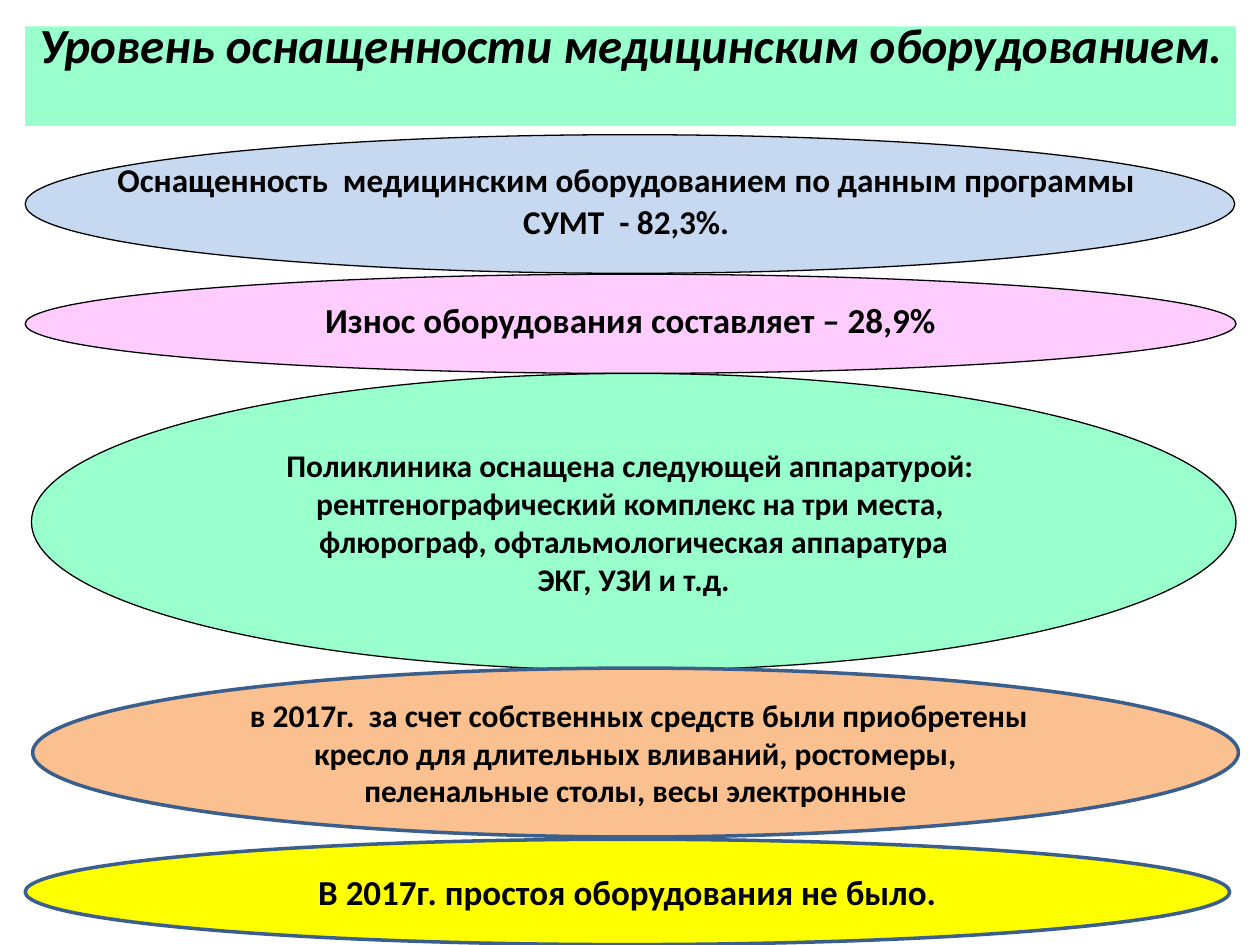
import pptx
import pptx.util
import pptx.dml.color
import pptx.enum.shapes
import pptx.enum.text

Pt = pptx.util.Pt
RGBColor = pptx.dml.color.RGBColor
MIDDLE = pptx.enum.text.MSO_ANCHOR.MIDDLE
CENTER = pptx.enum.text.PP_ALIGN.CENTER

THEME = {
    "font": "Calibri",
    "text": "000000",
    "mint": "99FFCC",
    "blue": "C6D9F1",
    "pink": "FFCCFF",
    "orange": "FAC090",
    "yellow": "FFFF00",
    "thin": ("000000", 0.75),
    "thick": ("3A5F8C", 2),
    "title": 28,
    "large": 20,
    "medium": 19,
    "body": 18,
}
TIGHT = {"line_spacing": 0.8, "space_before": Pt(6)}

TITLE = "Уровень оснащенности медицинским оборудованием."
TITLE_BOX = (14.4, 15.1, 691.9, 56.9)

# box, fill, outline, type size, wrap, paragraph spacing, paragraphs
ELLIPSES = [
    ((14.4, 77, 691.2, 79.2), "blue", "thin", "medium", False, TIGHT, [
        "Оснащенность  медицинским оборудованием по данным программы ",
        "СУМТ  - 82,3%. "]),
    ((14.4, 156.7, 691.9, 56.7), "pink", "thin", "large", False, TIGHT, [
        "Износ оборудования составляет – 28,9%"]),
    ((18, 213.4, 688.3, 169.6), "mint", "thin", "body", False, {}, [
        "Поликлиника оснащена следующей аппаратурой: ",
        "рентгенографический комплекс на три места, ",
        "флюрограф, офтальмологическая аппаратура",
        "ЭКГ, УЗИ и т.д."]),
    ((18.7, 381.8, 689, 96.5), "orange", "thick", "body", True, {}, [
        " в 2017г.  за счет собственных средств были приобретены кресло для "
        "длительных вливаний, ростомеры, пеленальные столы, весы электронные"]),
    ((14.4, 479.6, 688.3, 60.2), "yellow", "thick", "large", True, {}, [
        "В 2017г. простоя оборудования не было."]),
]


def set_attributes(target, values):
    for name, value in values.items():
        setattr(target, name, value)


def place(shape, box):
    set_attributes(shape, dict(zip(("left", "top", "width", "height"), map(Pt, box))))


def paint(shape, color):
    shape.fill.solid()
    shape.fill.fore_color.rgb = RGBColor.from_string(THEME[color])


def write(frame, lines, size, spacing, italic=False):
    for index, line in enumerate(lines):
        paragraph = frame.paragraphs[0] if index == 0 else frame.add_paragraph()
        set_attributes(paragraph, {"alignment": CENTER, **spacing})
        run = paragraph.add_run()
        run.text = line
        set_attributes(run.font, {"name": THEME["font"], "size": Pt(THEME[size]),
                                  "bold": True, "italic": italic})
        run.font.color.rgb = RGBColor.from_string(THEME["text"])


def add_title(slide):
    title = slide.shapes.title
    place(title, TITLE_BOX)
    paint(title, "mint")
    # The deep bottom margin lifts the heading to the top edge of its band.
    set_attributes(title.text_frame, {
        "word_wrap": True, "vertical_anchor": MIDDLE,
        "auto_size": pptx.enum.text.MSO_AUTO_SIZE.NONE,
        "margin_left": 0, "margin_right": 0,
        "margin_top": 0, "margin_bottom": Pt(36.6)})
    write(title.text_frame, [TITLE], "title", {}, italic=True)


def add_ellipse(slide, box, fill, outline, size, wrap, spacing, lines):
    ellipse = slide.shapes.add_shape(
        pptx.enum.shapes.MSO_SHAPE.OVAL, *map(Pt, box))
    ellipse.shadow.inherit = False
    paint(ellipse, fill)
    color, width = THEME[outline]
    ellipse.line.color.rgb = RGBColor.from_string(color)
    ellipse.line.width = Pt(width)
    set_attributes(ellipse.text_frame, {"word_wrap": wrap, "vertical_anchor": MIDDLE})
    write(ellipse.text_frame, lines, size, spacing)


def main():
    presentation = pptx.Presentation()
    set_attributes(presentation, {"slide_width": Pt(720), "slide_height": Pt(540)})
    slide = presentation.slides.add_slide(presentation.slide_layouts[5])
    add_title(slide)
    for ellipse in ELLIPSES:
        add_ellipse(slide, *ellipse)
    presentation.save("out.pptx")


if __name__ == "__main__":
    main()
